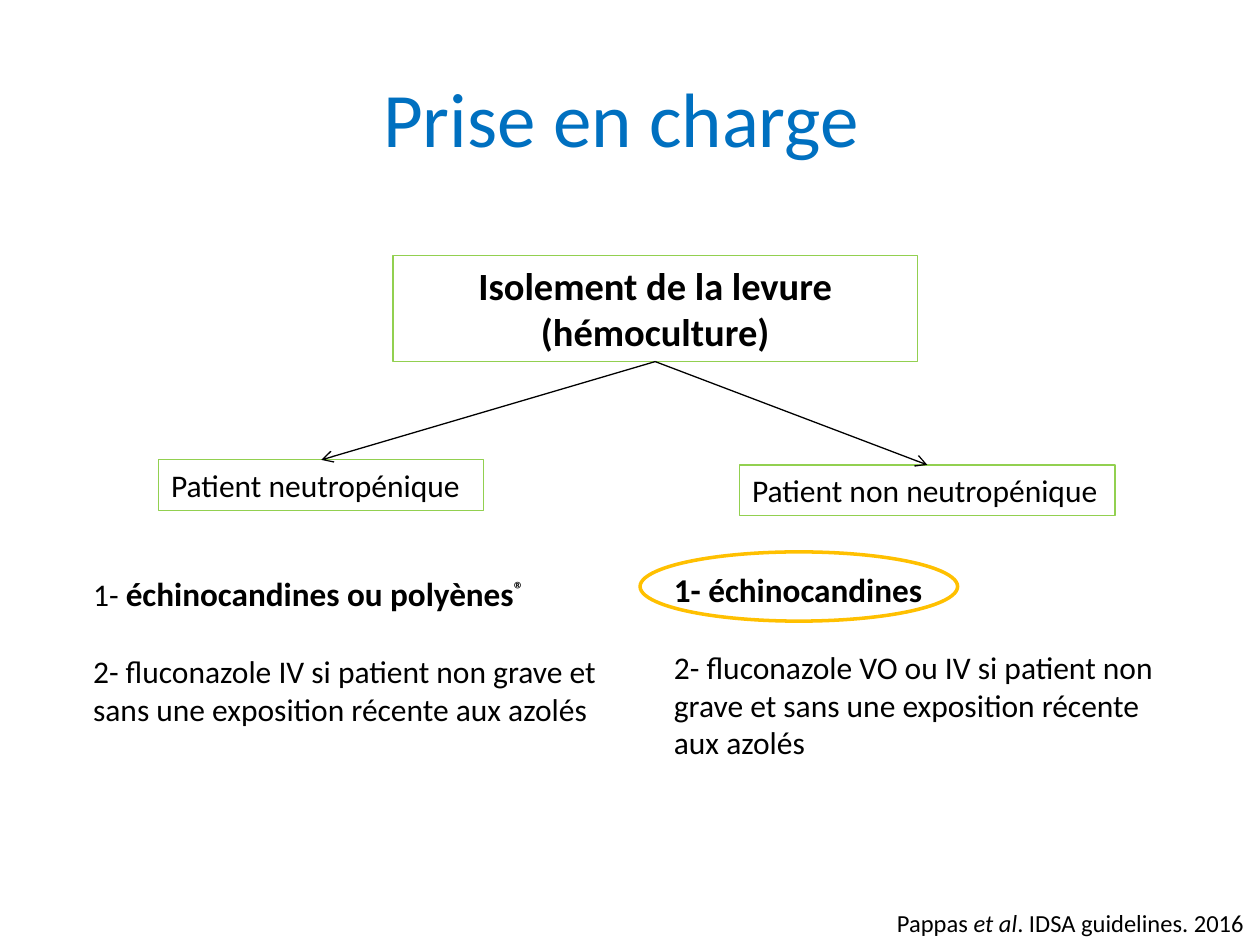
from pptx import Presentation
from pptx.dml.color import RGBColor
from pptx.enum.shapes import MSO_CONNECTOR as Connector, MSO_SHAPE as Shape
from pptx.enum.text import MSO_ANCHOR as Anchor, PP_ALIGN as Align
from pptx.oxml.ns import qn
from pptx.util import Inches, Pt
from lxml.etree import SubElement

COLORS = {"title": "0070C0", "text": "000000", "frame": "92D050",
          "arrow": "000000", "highlight": "FFC000"}
FONT = "Calibri"


def color(name):
    return RGBColor.from_string(COLORS[name])


def add_text(para, text, size=18, bold=False, italic=False, tint="text", raised=False):
    span = para.add_run()
    span.text = text
    font = span.font
    font.name, font.size, font.bold, font.italic = FONT, Pt(size), bold, italic
    font.color.rgb = color(tint)
    if raised:
        span._r.get_or_add_rPr().set("baseline", "30000")


class SlideBuilder:
    """Holds the style and the current slide, with a method for each kind of element."""

    def __init__(self, deck):
        self.page = deck.slides.add_slide(deck.slide_layouts[5])

    def title(self, text, left, top, width, height):
        box = self.page.shapes.title
        box.left, box.top, box.width, box.height = map(Inches, (left, top, width, height))
        frame = box.text_frame
        frame.vertical_anchor = Anchor.MIDDLE
        para = frame.paragraphs[0]
        para.alignment = Align.CENTER
        add_text(para, text, size=44, tint="title")

    def outline(self, kind, area, line, weight):
        shape = self.page.shapes.add_shape(kind, *map(Inches, area))
        shape.shadow.inherit = False
        shape.fill.background()
        shape.line.color.rgb = color(line)
        shape.line.width = Pt(weight)
        return shape

    def framed(self, text, area, align=Align.LEFT, **style):
        box = self.outline(Shape.RECTANGLE, area, "frame", 0.75)
        box.text_frame.word_wrap = True
        box.text_frame.vertical_anchor = Anchor.TOP
        para = box.text_frame.paragraphs[0]
        para.alignment = align
        add_text(para, text, **style)
        return box

    def text_box(self, area, paragraphs, gap=22):
        frame = self.page.shapes.add_textbox(*map(Inches, area)).text_frame
        frame.word_wrap = True
        for index, spans in enumerate(paragraphs):
            para = frame.add_paragraph() if index else frame.paragraphs[0]
            para.space_before = Pt(gap if index else 0)
            for text, style in spans:
                add_text(para, text, **style)

    def arrow(self, source, target):
        link = self.page.shapes.add_connector(Connector.STRAIGHT, 0, 0, 0, 0)
        link.begin_connect(source, 2)
        link.end_connect(target, 0)
        link.line.color.rgb = color("arrow")
        link.line.width = Pt(0.75)
        SubElement(link.line._get_or_add_ln(), qn("a:tailEnd"), type="arrow")
        SubElement(link._element.spPr, qn("a:effectLst"))


def main():
    deck = Presentation()
    deck.slide_width, deck.slide_height = Inches(10), Inches(7.5)
    slide = SlideBuilder(deck)
    slide.title("Prise en charge ", 0.5, 0.3, 9, 1.25)

    isolation = slide.framed("Isolement de la levure (hémoculture)", (3.12, 2.03, 4.16, 0.84),
                             align=Align.CENTER, size=22, bold=True)
    neutropenic = slide.framed("Patient neutropénique", (1.26, 3.65, 2.58, 0.4))
    other = slide.framed("Patient non neutropénique", (5.87, 3.69, 2.98, 0.4))

    strong = {"size": 19, "bold": True}
    slide.text_box((0.64, 4.49, 4.45, 1.35), [
        [("1- ", {}), ("échinocandines ou polyènes", strong),
         ("®", {"size": 20, "bold": True, "raised": True})],
        [("2- fluconazole IV si patient non grave et sans une exposition récente aux azolés", {})],
    ])
    slide.text_box((5.25, 4.47, 4.25, 1.63), [
        [("1- échinocandines", strong)],
        [("2- fluconazole VO ou IV si patient non grave et sans une exposition récente aux azolés",
          {})],
    ])

    for target in (neutropenic, other):
        slide.arrow(isolation, target)
    slide.outline(Shape.OVAL, (5.08, 4.38, 2.52, 0.55), "highlight", 2)

    slide.text_box((7.02, 7.16, 2.98, 0.34), [
        [("Pappas ", {"size": 14}), ("et al", {"size": 14, "italic": True}),
         (". IDSA guidelines. 2016", {"size": 14})],
    ])
    deck.save("out.pptx")


if __name__ == "__main__":
    main()
